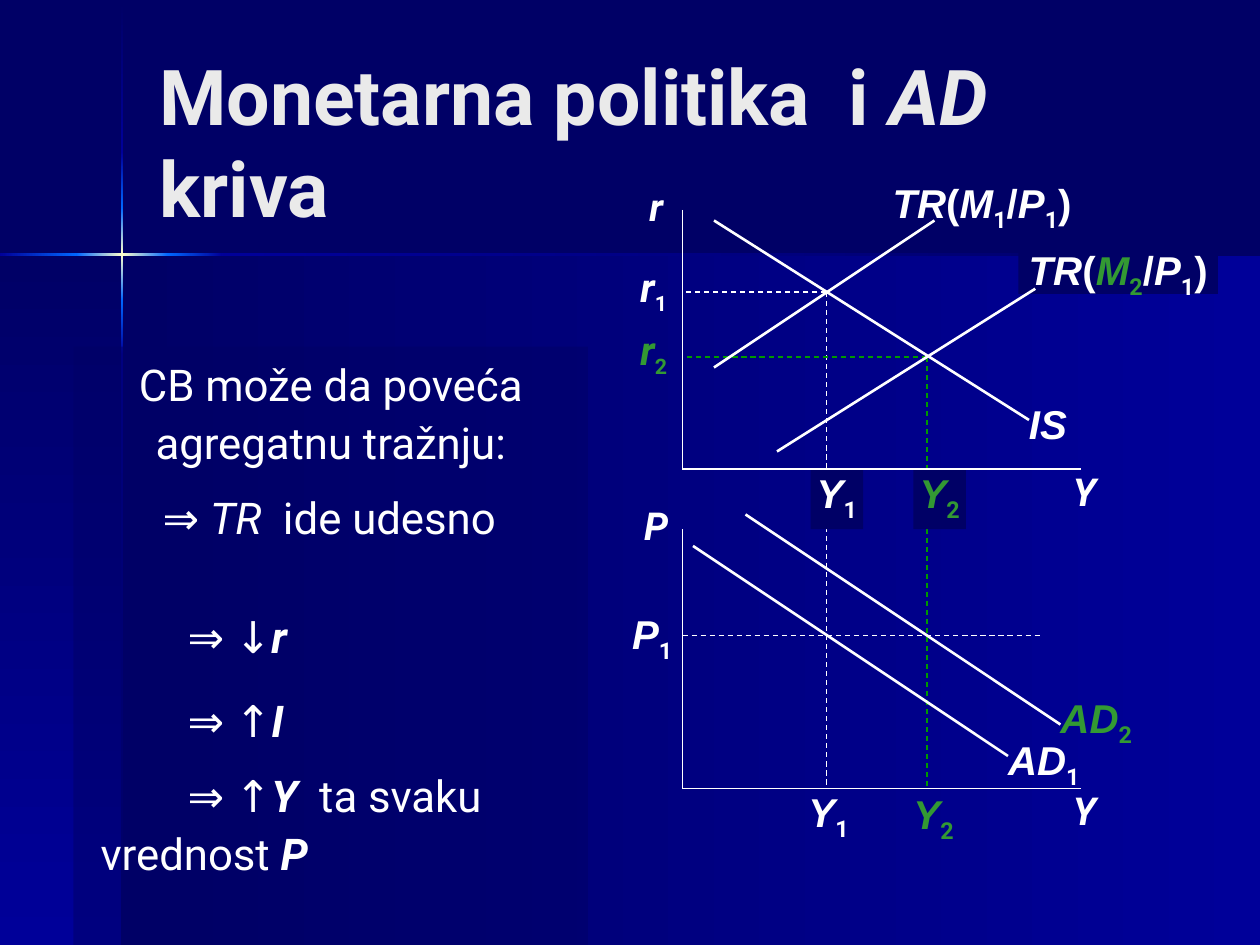
"""Builds the slide on monetary policy and the AD curve on a grid of twelve cells to the inch."""
from itertools import groupby, pairwise
from lxml import etree
from pptx import Presentation
from pptx.dml.color import RGBColor
from pptx.enum.dml import MSO_LINE
from pptx.enum.shapes import MSO_CONNECTOR, MSO_SHAPE
from pptx.enum.text import MSO_ANCHOR, PP_ALIGN
from pptx.oxml.ns import qn
from pptx.util import Inches, Pt

HUES = {"dark": "000066", "mid": "000099", "blue": "0066FF", "pale": "FFFFCC",
        "white": "FFFFFF", "title": "EAEAEA", "green": "339933", "dash": "009900"}
SANS, HEAD = "Arial", "Roboto"

PANELS = [((11.6, 24.2, 108.4, 65.8), 0), ((0, 24.2, 11.6, 65.8), 90)]
RAYS = [("dark", "mid"), ("mid", "blue"), ("blue", "pale", "blue"), ("blue", "mid"), ("mid", "dark")]
DOWN = [0.1, 14.5, 19.8, 28.6, 33.8, 90]
ALONG = [0, 7.3, 16, 21.2, 120]

GRAPHS = [(20, "r"), (50.4, "P")]
CURVES = [(68, 21, 98, 40), (74, 43, 98.6, 27.5), (68, 35, 89, 21),
          (66, 52, 96, 72), (71, 49, 101, 69)]
GUIDES = [((65, 60.5, 99, 60.5), "white"), ((78.7, 27.8, 78.7, 75.1), "white"),
          ((78.7, 27.8, 65, 27.8), "white"), ((88.3, 34, 88.3, 75.1), "dash"),
          ((88.3, 34, 65, 34), "dash")]
LABELS = [
    ((98, 38, 4, 4.6), [("IS", "white")], SANS, None),
    ((97, 23.4, 19, 4.6), [("TR(", "white"), ("M2", "green"), ("/P1)", "white")], SANS, "dark"),
    ((85, 17, 22, 4.6), [("TR(M1/P1)", "white")], SANS, None),
    ((96, 70, 9, 5.8), [("AD1", "white")], SANS, None),
    ((101, 66, 9, 5.8), [("AD2", "green")], SANS, None),
    ((60.2, 58, 5, 5.8), [("P1", "white")], SANS, None),
    ((77.2, 44.6, 5, 5.8), [("Y1", "white")], SANS, "dark"),
    ((77, 75, 5, 4.6), [("Y1", "white")], SANS, None),
    ((87, 44.6, 5, 5.8), [("Y2", "green")], SANS, "dark"),
    ((87, 75.2, 5, 5.8), [("Y2", "green")], SANS, None),
    ((61, 25, 5, 4.6), [("r1", "white")], HEAD, None),
    ((61, 31, 5, 4.6), [("r2", "green")], HEAD, None),
]
TITLE = [("Monetarna politika  i ", ""), ("AD ", "i"), ("kriva", "")]
NOTES = [
    ((7, 33, 49, 57), "dark", [[("CB može da poveća agregatnu tražnju:", "")],
                               [("⇒ ", ""), ("TR ", "i"), (" ide udesno", "")]]),
    ((8.4, 57, 49, 6), None, [[("\t⇒ ↓", ""), ("r", "bi")]]),
    ((8.4, 65, 49, 21), None, [[("\t⇒ ↑", ""), ("I", "bi")],
                               [("\t⇒ ↑", ""), ("Y  ", "bi"), ("ta svaku vrednost ", ""), ("P", "bi")]]),
]


def cells(spot):
    return [Inches(n / 12) for n in spot]


def tint(name):
    return RGBColor.from_string(HUES[name])


def add(node, tag, **attrs):
    return etree.SubElement(node, qn(tag), attrs)


def block(spot, hue=None):
    shape = slide.shapes.add_shape(MSO_SHAPE.RECTANGLE, *cells(spot))
    shape.shadow.inherit = False
    shape.line.fill.background()
    if hue:
        shape.fill.solid()
        shape.fill.fore_color.rgb = tint(hue)
    return shape


def blend(spot, turn, hues):
    props = block(spot).element.spPr
    fill = etree.Element(qn("a:gradFill"), rotWithShape="1")
    stops = add(fill, "a:gsLst")
    for n, hue in enumerate(hues):
        stop = add(stops, "a:gs", pos=str(n * 100000 // (len(hues) - 1)))
        add(stop, "a:srgbClr", val=HUES[hue])
    add(fill, "a:lin", ang=str(turn * 60000), scaled="0")
    props.find(qn("a:prstGeom")).addnext(fill)


def stroke(ends, width, hue="white", dash=False):
    line = slide.shapes.add_connector(MSO_CONNECTOR.STRAIGHT, *cells(ends))
    line.line.color.rgb = tint(hue)
    line.line.width = Pt(width)
    if dash:
        line.line.dash_style = MSO_LINE.DASH
    add(line.element.spPr, "a:effectLst")


def frame(spot, hue=None, inset=None):
    shape = block(spot, hue) if hue else slide.shapes.add_textbox(*cells(spot))
    text = shape.text_frame
    text.word_wrap = True
    text.vertical_anchor = MSO_ANCHOR.TOP
    if inset is not None:
        text.margin_left = text.margin_right = text.margin_top = text.margin_bottom = inset
    return shape, text


def style(para, size, hue="white", bold=False, face=HEAD):
    para.alignment = para.alignment or PP_ALIGN.LEFT
    font = para.font
    font.size, font.name, font.bold = Pt(size), face, bold
    font.color.rgb = tint(hue)


def write(para, parts):
    for words, marks in parts:
        run = para.add_run()
        run.text = words
        if "b" in marks:
            run.font.bold = True
        if "i" in marks:
            run.font.italic = True


def label(spot, parts, face, hue):
    para = frame(spot, hue, 0)[1].paragraphs[0]
    style(para, 23, bold=True, face=face)
    for words, shade in parts:
        for kind, chars in groupby(words, lambda c: (c.isalpha(), c.isdigit())):
            run = para.add_run()
            run.text = "".join(chars)
            run.font.italic = kind[0]
            run.font.color.rgb = tint(shade)
            if kind[1]:
                run.font.name = HEAD
                run.font.size = Pt(21 if face == HEAD else 23)
                run.font.element.set("baseline", "-25000") if hasattr(run.font, "element") else \
                    run._r.get_or_add_rPr().set("baseline", "-25000")


def note(spot, hue, paras):
    shape, text = frame(spot, hue)
    if hue:
        color = shape.element.spPr.find(qn("a:solidFill"))[0]
        add(color, "a:alpha", val="50000")
    for n, parts in enumerate(paras):
        para = text.add_paragraph() if n else text.paragraphs[0]
        props = para._p.get_or_add_pPr()
        if parts[0][0].startswith("⇒"):
            props.set("indent", str(Inches(0.61)))
        tabs = add(props, "a:tabLst")
        add(tabs, "a:tab", pos=str(Inches(0.69)), algn="l")
        para.line_spacing = 1.1
        if n:
            para.space_before = Pt(10)
        style(para, 25)
        write(para, parts)


def letter(spot, words, align):
    para = frame(spot)[1].paragraphs[0]
    para.alignment = align
    style(para, 22, bold=True)
    write(para, [(words, "i")])


deck = Presentation()
deck.slide_width, deck.slide_height = cells((120, 90))
slide = deck.slides.add_slide(deck.slide_layouts[6])
slide.background.fill.solid()
slide.background.fill.fore_color.rgb = tint("dark")

for spot, turn in PANELS:
    blend(spot, turn, ("dark", "mid"))
for (top, end), hues in zip(pairwise(DOWN), RAYS):
    blend((11.5, top, 0.24, end - top), 90, hues)
for (left, end), hues in zip(pairwise(ALONG), RAYS[1:]):
    blend((left, 24.1, end - left, 0.24), 0, hues)

text = frame((14, 4, 99, 18.8))[1]
text.vertical_anchor = MSO_ANCHOR.MIDDLE
style(text.paragraphs[0], 44, "title", True)
write(text.paragraphs[0], TITLE)

for ends, hue in GUIDES:
    stroke(ends, 0.75, hue, True)
for item in LABELS:
    label(*item)
for ends in CURVES:
    stroke(ends, 1.5)
for top, name in GRAPHS:
    base = top + 24.7
    stroke((65, top, 65, base), 1)
    stroke((65, base, 103, base), 1)
    letter((101, base - 0.7, 7, 5.6), "Y", PP_ALIGN.LEFT)
    letter((60, top - 3.2, 5, 5.6), name, PP_ALIGN.CENTER)
for item in NOTES:
    note(*item)

deck.save("out.pptx")
